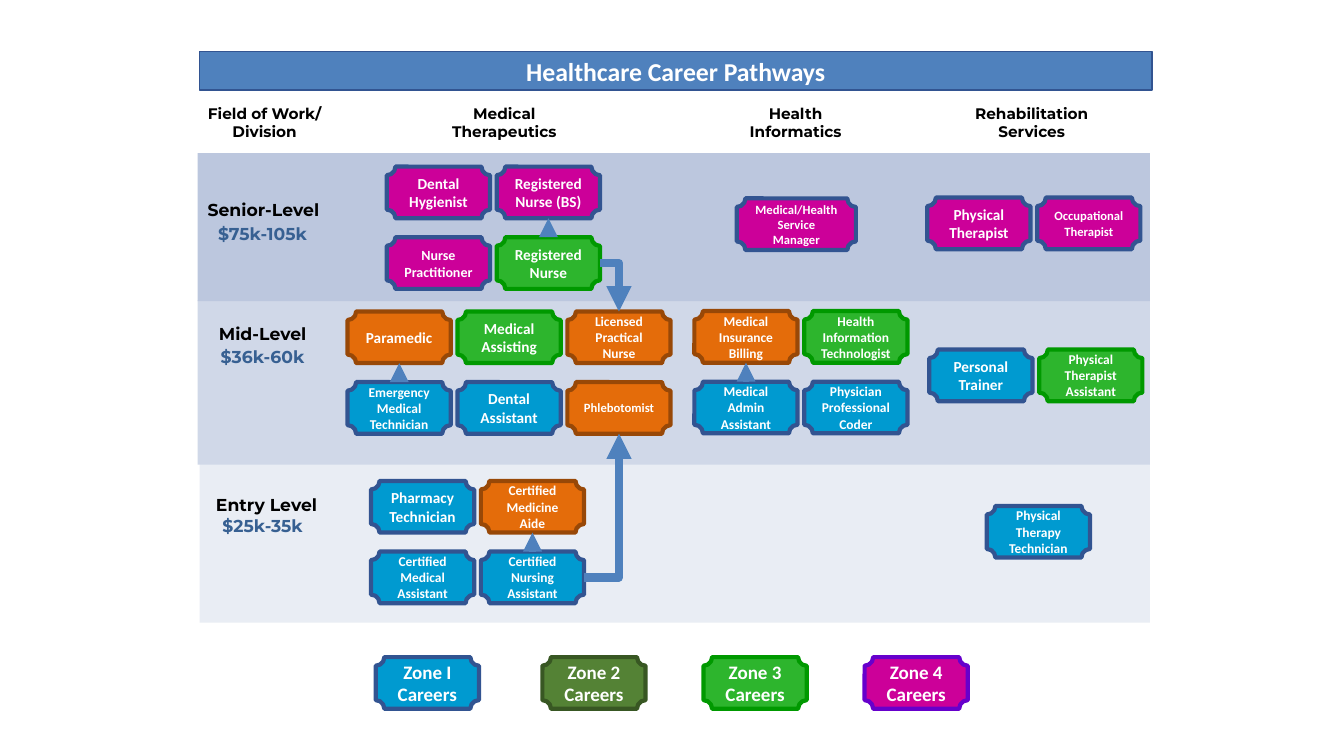
from lxml import etree
from pptx import Presentation
from pptx.dml.color import RGBColor
from pptx.enum.shapes import MSO_CONNECTOR, MSO_SHAPE
from pptx.enum.text import MSO_ANCHOR, MSO_AUTO_SIZE, PP_ALIGN
from pptx.oxml.ns import qn
from pptx.util import Cm, Pt

RECT, PLAQUE = MSO_SHAPE.RECTANGLE, MSO_SHAPE.PLAQUE
LINE, ELBOW = MSO_CONNECTOR.STRAIGHT, MSO_CONNECTOR.ELBOW
MIDDLE, CENTER = MSO_ANCHOR.MIDDLE, PP_ALIGN.CENTER
NO_FIT = MSO_AUTO_SIZE.NONE
TOP, BOTTOM, RIGHT = 0, 2, 3  # connection sites

WHITE = RGBColor(0xFF, 0xFF, 0xFF)
BLACK = RGBColor(0, 0, 0)
STEEL = RGBColor(0x4F, 0x81, 0xBD)
NAVY = RGBColor(0x32, 0x54, 0x91)
PAY = RGBColor(0x37, 0x60, 0x92)

# Card styles: fill and outline
BLUE = RGBColor(0x00, 0x9A, 0xD0), NAVY
PINK = RGBColor(0xCC, 0x00, 0x99), NAVY
ORANGE = RGBColor(0xE4, 0x6C, 0x0A), RGBColor(0x98, 0x48, 0x07)
GREEN = RGBColor(0x2D, 0xB5, 0x2D), RGBColor(0x00, 0x99, 0x00)
OLIVE = RGBColor(0x54, 0x82, 0x35), RGBColor(0x38, 0x57, 0x23)
VIOLET = PINK[0], RGBColor(0x66, 0x00, 0xCC)

CARD_W, CARD_H = 2.6, 1.3
STEP_X, STEP_Y = 2.77, 1.78
BIG, MID, SMALL = 10.9, 9.6, 9

# left, top, width, height, fill
BANDS = [
    (5.03, 11.68, 23.95, 4.01, RGBColor(0xE9, 0xED, 0xF4)),
    (4.98, 7.57, 24, 4.14, RGBColor(0xD0, 0xD8, 0xE8)),
    (4.98, 3.86, 24, 3.73, RGBColor(0xBC, 0xC7, 0xDE)),
]
HEADS = [
    (4.93, "Field of Work/ Division"),
    (10.97, "Medical Therapeutics"),
    (18.31, "Health Informatics"),
    (24.26, "Rehabilitation Services"),
]
# level, left, top, pay, pay top
LEVELS = [
    ("Senior-Level", 4.9, 4.9, "$75k-105k", 5.51),
    ("Mid-Level", 4.88, 8.03, "$36k-60k", 8.59),
    ("Entry Level", 4.98, 12.32, "$25k-35k", 12.85),
]
# left, top, rows of cards
GROUPS = [
    (9.75, 4.2, [
        [("Dental Hygienist", PINK, BIG), ("Registered Nurse (BS)", PINK, BIG)],
        [("Nurse Practitioner", PINK, 10), ("Registered Nurse", GREEN, BIG)],
    ]),
    (8.76, 7.85, [
        [("Paramedic", ORANGE, BIG), ("Medical Assisting", GREEN, BIG),
         ("Licensed Practical Nurse", ORANGE, MID)],
        [("Emergency Medical Technician", BLUE, MID),
         ("Dental Assistant", BLUE, BIG), ("Phlebotomist", ORANGE, SMALL)],
    ]),
    (9.35, 12.12, [
        [("Pharmacy Technician", BLUE, BIG),
         ("Certified Medicine Aide", ORANGE, MID)],
        [("Certified Medical Assistant", BLUE, MID),
         ("Certified Nursing Assistant", BLUE, MID)],
    ]),
    (17.5, 7.84, [
        [("Medical Insurance Billing", ORANGE, MID),
         ("Health Information Technologist", GREEN, MID)],
        [("Medical Admin Assistant", BLUE, MID),
         ("Physician Professional Coder", BLUE, MID)],
    ]),
    (23.37, 4.98, [[("Physical Therapist", PINK, BIG),
                    ("Occupational Therapist", PINK, SMALL)]]),
    (23.42, 8.81, [[("Personal Trainer", BLUE, BIG),
                    ("Physical Therapist Assistant", GREEN, MID)]]),
    (24.87, 12.75, [[("Physical Therapy Technician", BLUE, MID)]]),
]
RISES = [
    ("Registered Nurse", "Registered Nurse (BS)"),
    ("Emergency Medical Technician", "Paramedic"),
    ("Medical Admin Assistant", "Medical Insurance Billing"),
    ("Certified Nursing Assistant", "Certified Medicine Aide"),
]
TURNS = [
    ("Registered Nurse", "Licensed Practical Nurse", TOP),
    ("Certified Nursing Assistant", "Phlebotomist", BOTTOM),
]
ZONES = [
    (9.47, "Zone I Careers", BLUE),
    (13.67, "Zone 2 Careers", OLIVE),
    (17.73, "Zone 3 Careers", GREEN),
    (21.79, "Zone 4 Careers", VIOLET),
]


class Chart:
    """Draws the parts of the pathway chart on one slide."""

    def __init__(self, slide):
        self.shapes = slide.shapes
        self.cards = {}

    def letter(self, shape, text, size, color, face="Calibri"):
        """Put centred bold text in a shape and return its frame."""
        frame = shape.text_frame
        frame.word_wrap = True
        frame.auto_size = NO_FIT
        frame.text = text
        para = frame.paragraphs[0]
        para.alignment = CENTER
        font = para.font
        font.name, font.size, font.bold = face, Pt(size), True
        font.color.rgb = color
        return frame

    def paint(self, shape, fill, edge, width):
        shape.fill.solid()
        shape.fill.fore_color.rgb = fill
        shape.line.color.rgb = edge
        shape.line.width = Pt(width)

    def title(self, text):
        bar = self.shapes.title
        bar.left, bar.top = Cm(5.03), Cm(1.3)
        bar.width, bar.height = Cm(24), Cm(0.97)
        geom = etree.SubElement(bar._element.spPr, qn("a:prstGeom"), prst="plaque")
        etree.SubElement(geom, qn("a:avLst"))
        self.paint(bar, STEEL, NAVY, 1)
        self.letter(bar, text, 18.4, WHITE).vertical_anchor = MIDDLE

    def band(self, left, top, width, height, fill):
        box = self.shapes.add_shape(RECT, Cm(left), Cm(top), Cm(width), Cm(height))
        box.shadow.inherit = False
        box.fill.solid()
        box.fill.fore_color.rgb = fill
        box.line.fill.background()

    def label(self, left, top, height, text, size, color=BLACK):
        box = self.shapes.add_textbox(Cm(left), Cm(top), Cm(3.48), Cm(height))
        self.letter(box, text, size, color, "Montserrat")

    def card(self, left, top, text, style, size, width=CARD_W):
        box = self.shapes.add_shape(PLAQUE, Cm(left), Cm(top), Cm(width), Cm(CARD_H))
        box.shadow.inherit = False
        self.paint(box, *style, 3)
        self.letter(box, text, size, WHITE).vertical_anchor = MIDDLE
        self.cards[text] = box

    def arrow(self, kind, start, out, end, into, width):
        """Join two cards, named by their text, at the given sites."""
        link = self.shapes.add_connector(kind, 0, 0, 0, 0)
        link.begin_connect(self.cards[start], out)
        link.end_connect(self.cards[end], into)
        link.line.color.rgb = STEEL
        link.line.width = Pt(width)
        props = link._element.spPr
        if kind == ELBOW:
            props.find(qn("a:prstGeom")).set("prst", "bentConnector2")
        etree.SubElement(props.find(qn("a:ln")), qn("a:tailEnd"), type="triangle")
        etree.SubElement(props, qn("a:effectLst"))


def main():
    deck = Presentation()
    deck.slide_width, deck.slide_height = Cm(33.87), Cm(19.05)
    chart = Chart(deck.slides.add_slide(deck.slide_layouts[5]))

    chart.title("Healthcare Career Pathways")
    for band in BANDS:
        chart.band(*band)
    for left, text in HEADS:
        chart.label(left, 2.5, 1.19, text, 10.9)
    for name, left, top, pay, low in LEVELS:
        chart.label(left, top, 0.79, name, 12.3)
        chart.label(4.88, low, 0.79, pay, 12.3, PAY)

    for left, top, rows in GROUPS:
        for i, row in enumerate(rows):
            for j, card in enumerate(row):
                chart.card(left + j * STEP_X, top + i * STEP_Y, *card)
    chart.card(18.57, 5, "Medical/Health Service Manager", PINK, SMALL, 3)
    for left, text, style in ZONES:
        chart.card(left, 16.56, text, style, 13.6)

    for start, end in RISES:
        chart.arrow(LINE, start, TOP, end, BOTTOM, 4.5)
    for start, end, site in TURNS:
        chart.arrow(ELBOW, start, RIGHT, end, site, 6)

    deck.save("out.pptx")


if __name__ == "__main__":
    main()
